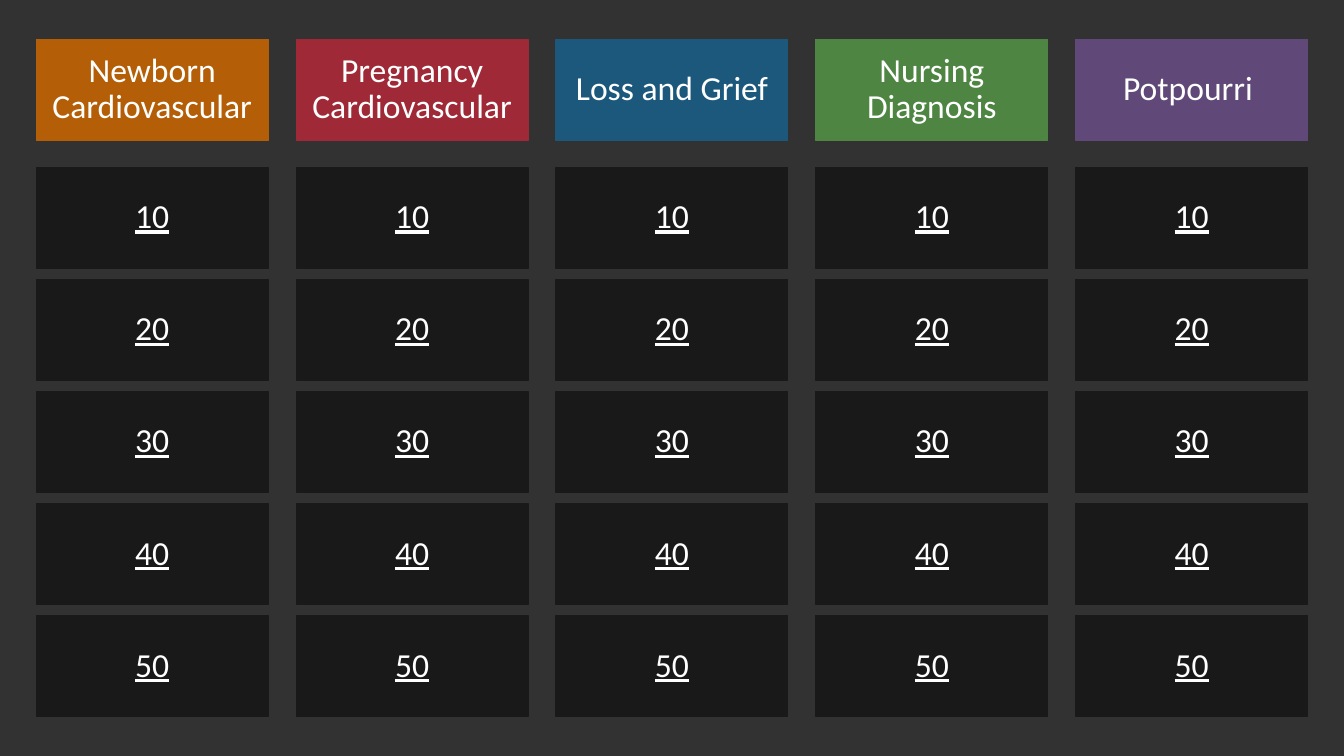
from dataclasses import dataclass

from pptx import Presentation
from pptx.dml.color import RGBColor
from pptx.enum.shapes import MSO_SHAPE
from pptx.enum.text import MSO_ANCHOR, PP_ALIGN
from pptx.slide import Slide
from pptx.util import Inches, Pt


@dataclass(frozen=True)
class Theme:
    back: str = "323232"
    tile: str = "191919"
    text: str = "FFFFFF"
    font: str = "Calibri"
    size: float = 24
    line: float = 0.75
    spacing: float = 0.9


@dataclass(frozen=True)
class Topic:
    title: str
    color: str


@dataclass(frozen=True)
class Tile:
    left: float
    top: float
    text: str
    color: str
    linked: bool = False


THEME = Theme()
TOPICS = [
    Topic("Newborn Cardiovascular", "B45F07"),
    Topic("Pregnancy Cardiovascular", "9F2936"),
    Topic("Loss and Grief", "1B587C"),
    Topic("Nursing Diagnosis", "4E8542"),
    Topic("Potpourri ", "604878"),
]
POINTS = [10, 20, 30, 40, 50]

# Board geometry in inches
SLIDE_W, SLIDE_H = 13.33, 7.5
TILE_W, TILE_H = 2.3, 1.0
MARGIN = 0.36
HEAD_TOP = 0.39
FIRST_TOP, LAST_TOP = 1.66, 6.11
COL_STEP = (SLIDE_W - 2 * MARGIN - TILE_W) / (len(TOPICS) - 1)
ROW_STEP = (LAST_TOP - FIRST_TOP) / (len(POINTS) - 1)


def draw_tile(slide: Slide, tile: Tile) -> None:
    box = slide.shapes.add_shape(
        MSO_SHAPE.RECTANGLE, Inches(tile.left), Inches(tile.top),
        Inches(TILE_W), Inches(TILE_H))
    box.shadow.inherit = False
    color = RGBColor.from_string(tile.color)
    box.fill.solid()
    box.fill.fore_color.rgb = color
    box.line.color.rgb = color
    box.line.width = Pt(THEME.line)

    frame = box.text_frame
    frame.word_wrap = True
    frame.vertical_anchor = MSO_ANCHOR.MIDDLE
    para = frame.paragraphs[0]
    para.alignment = PP_ALIGN.CENTER
    para.line_spacing = THEME.spacing
    run = para.add_run()
    run.text = tile.text
    run.font.name = THEME.font
    run.font.size = Pt(THEME.size)
    run.font.color.rgb = RGBColor.from_string(THEME.text)
    if tile.linked:
        run.font.underline = True


def draw_column(slide: Slide, topic: Topic, left: float) -> None:
    # Topic heading
    draw_tile(slide, Tile(left, HEAD_TOP, topic.title, topic.color))
    # Point tiles
    for row, points in enumerate(POINTS):
        top = FIRST_TOP + row * ROW_STEP
        draw_tile(slide, Tile(left, top, str(points), THEME.tile, True))


def main() -> None:
    deck = Presentation()
    deck.slide_width = Inches(SLIDE_W)
    deck.slide_height = Inches(SLIDE_H)
    slide = deck.slides.add_slide(deck.slide_layouts[6])

    # Background
    fill = slide.background.fill
    fill.solid()
    fill.fore_color.rgb = RGBColor.from_string(THEME.back)

    # Game board
    for col, topic in enumerate(TOPICS):
        draw_column(slide, topic, MARGIN + col * COL_STEP)

    deck.save("out.pptx")


if __name__ == "__main__":
    main()
